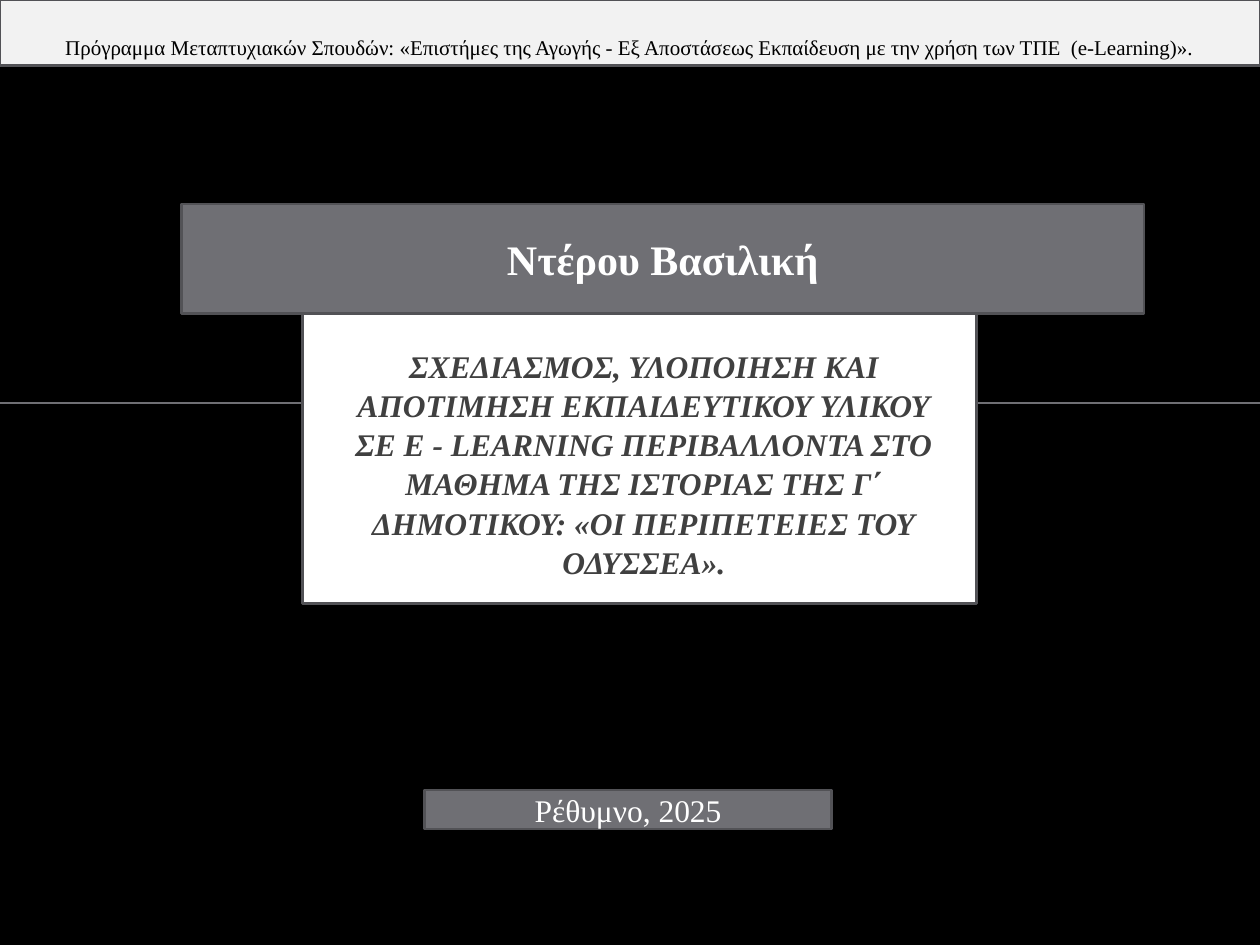
from dataclasses import dataclass

from lxml import etree
from pptx import Presentation
from pptx.dml.color import RGBColor
from pptx.enum import shapes, text
from pptx.oxml.ns import qn
from pptx.util import Inches, Pt

FONT = "Times New Roman"
BLACK = RGBColor(0x00, 0x00, 0x00)
WHITE = RGBColor(0xFF, 0xFF, 0xFF)
PALE = RGBColor(0xF2, 0xF2, 0xF2)
GRAY = RGBColor(0x6F, 0x6F, 0x74)
EDGE = RGBColor(0x52, 0x52, 0x56)
INK = RGBColor(0x40, 0x40, 0x40)


@dataclass
class Box:
    left: float
    top: float
    width: float
    height: float
    fill: RGBColor
    words: str = ""
    size: int = 18
    color: RGBColor = WHITE
    bold: bool = False
    anchor: text.MSO_ANCHOR = text.MSO_ANCHOR.MIDDLE


PANEL = Box(2.4, 2.49, 5.35, 2.3, WHITE)
BANDS = [
    Box(0, 0, 10, 0.52, PALE,
        "Πρόγραμμα Μεταπτυχιακών Σπουδών: «Επιστήμες της Αγωγής - Εξ Αποστάσεως "
        "Εκπαίδευση με την χρήση των ΤΠΕ  (e-Learning)».",
        12, BLACK, anchor=text.MSO_ANCHOR.BOTTOM),
    Box(3.37, 6.27, 3.23, 0.31, GRAY, "Ρέθυμνο, 2025"),
    Box(1.44, 1.62, 7.64, 0.87, GRAY, "Ντέρου Βασιλική", 24, bold=True),
]
TITLE = ("ΣΧΕΔΙΑΣΜΟΣ, ΥΛΟΠΟΙΗΣΗ ΚΑΙ ΑΠΟΤΙΜΗΣΗ ΕΚΠΑΙΔΕΥΤΙΚΟΥ ΥΛΙΚΟΥ ΣΕ "
         "E - LEARNING ΠΕΡΙΒΑΛΛΟΝΤΑ ΣΤΟ ΜΑΘΗΜΑ ΤΗΣ ΙΣΤΟΡΙΑΣ ΤΗΣ Γ΄ ΔΗΜΟΤΙΚΟΥ: "
         "«ΟΙ ΠΕΡΙΠΕΤΕΙΕΣ ΤΟΥ ΟΔΥΣΣΕΑ».")


def write(shape, words: str, size: int, color: RGBColor,
          bold: bool, italic: bool = False) -> None:
    frame = shape.text_frame
    frame.text = words
    frame.word_wrap = True
    para = frame.paragraphs[0]
    para.alignment = text.PP_ALIGN.CENTER
    font = para.runs[0].font
    font.name, font.size = FONT, Pt(size)
    font.bold, font.italic = bold, italic
    font.color.rgb = color


def draw_box(slide, box: Box) -> None:
    shape = slide.shapes.add_shape(
        shapes.MSO_SHAPE.RECTANGLE, Inches(box.left), Inches(box.top),
        Inches(box.width), Inches(box.height))
    shape.shadow.inherit = False
    shape.fill.solid()
    shape.fill.fore_color.rgb = box.fill
    shape.line.color.rgb = EDGE
    shape.line.width = Pt(1.5)
    if box.words:
        write(shape, box.words, box.size, box.color, box.bold)
        shape.text_frame.vertical_anchor = box.anchor
        shape.text_frame.margin_bottom = Inches(0.05)


def draw_rule(slide, y: float) -> None:
    """Draw a thin line across the whole slide."""
    rule = slide.shapes.add_connector(
        shapes.MSO_CONNECTOR.STRAIGHT, 0, Inches(y), Inches(10), Inches(y))
    rule.line.color.rgb = GRAY
    rule.line.width = Pt(1)
    etree.SubElement(rule.element.spPr, qn("a:effectLst"))


def set_title(slide) -> None:
    title = slide.shapes.title
    title.left, title.top = Inches(2.71), Inches(2.25)
    title.width, title.height = Inches(4.8), Inches(2.36)
    write(title, TITLE, 18, INK, True, True)
    frame = title.text_frame
    frame.auto_size = text.MSO_AUTO_SIZE.NONE
    frame.vertical_anchor = text.MSO_ANCHOR.BOTTOM
    frame.margin_bottom = 0
    frame.paragraphs[0].space_before = Pt(4)
    frame.paragraphs[0].line_spacing = 1.04
    # Bring the title in front of the white panel.
    title.element.getparent().append(title.element)


def main() -> None:
    deck = Presentation()
    deck.slide_width, deck.slide_height = Inches(10), Inches(7.5)
    slide = deck.slides.add_slide(deck.slide_layouts[5])
    slide.background.fill.solid()
    slide.background.fill.fore_color.rgb = BLACK
    draw_rule(slide, 3.2)
    draw_box(slide, PANEL)
    set_title(slide)
    for band in BANDS:
        draw_box(slide, band)
    deck.save("out.pptx")


if __name__ == "__main__":
    main()
